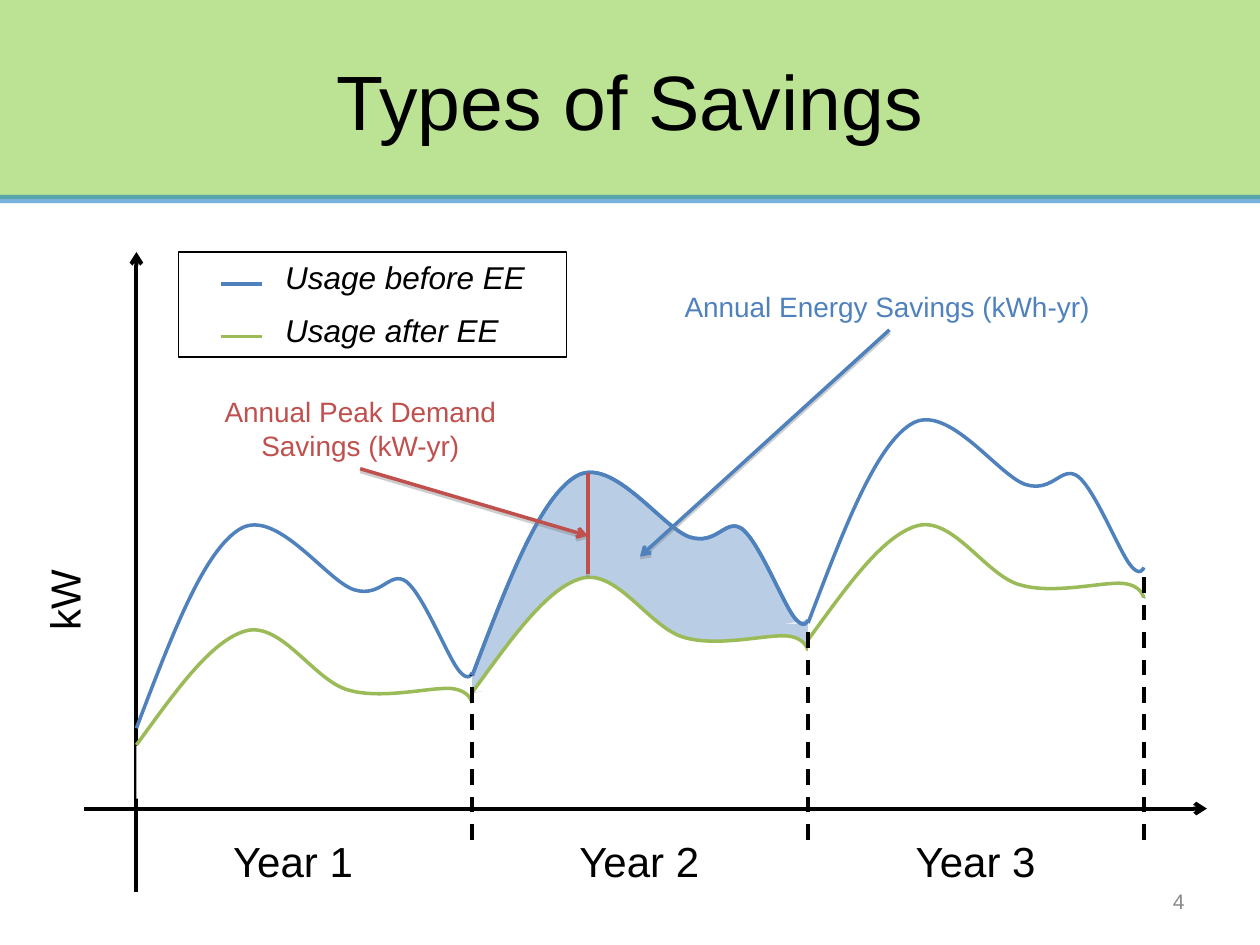
from dataclasses import dataclass

from lxml.etree import SubElement
from pptx import Presentation
from pptx.dml.color import RGBColor
from pptx.enum.dml import MSO_LINE
from pptx.enum.shapes import MSO_CONNECTOR, MSO_SHAPE
from pptx.enum.text import MSO_ANCHOR, PP_ALIGN
from pptx.oxml.ns import qn
from pptx.util import Cm, Pt


@dataclass(frozen=True)
class Theme:
    font: str = "Arial"
    ink: str = "000000"
    paper: str = "FFFFFF"
    band: str = "92D050"
    rule: str = "0070C0"
    before: str = "4F81BD"
    after: str = "9BBB59"
    peak: str = "C0504D"
    savings: str = "B9CDE5"
    muted: str = "898989"
    shadow: str = "808080"
    title_size: int = 44
    axis_size: int = 24
    legend_size: int = 18
    note_size: int = 16
    number_size: int = 12
    axis_width: float = 2.25
    curve_width: float = 2


THEME = Theme()

# Plot geometry in cm: each year repeats the same profile, a step higher
ORIGIN_X, YEAR_WIDTH, YEAR_RISE = 2.75, 6.77, 1.06
BEFORE_START, AFTER_START = 14.68, 15.02
DASH_BOTTOM, DASH_TOPS = 16.93, (13.61, 12.55, 11.46)

# Bezier control points of one year, relative to its starting point
BEFORE_PROFILE = [
    (0, 0), (0.68, -1.78), (1.34, -3.56), (2.08, -4.01),
    (2.81, -4.47), (3.83, -2.97), (4.39, -2.79),
    (4.95, -2.62), (5.11, -3.2), (5.45, -2.95),
    (5.79, -2.67), (6.25, -1.5), (6.48, -1.19),
    (6.7, -0.89), (6.77, -1.12), (6.77, -1.12),
]
AFTER_PROFILE = [
    (0, 0), (0.76, -1.04), (1.49, -2.1), (2.2, -2.3),
    (2.92, -2.5), (3.58, -1.3), (4.27, -1.11),
    (4.95, -0.91), (5.92, -1.17), (6.34, -1.14),
    (6.75, -1.1), (6.77, -0.83), (6.77, -0.83),
]

# Areas that complete the fill under each curve, relative to its start
BEFORE_AREAS = ((0, -0.11, 6.77, 0.46), (0.64, -1.05, 6.13, 1.17))
AFTER_AREAS = ((1.69, -0.84, 5.08, 1.91), (0, 0.02, 3.18, 1.06))
AFTER_WEDGE = (0, -0.62, 2.96, 0.64)


def rgb(color):
    return RGBColor.from_string(color)


def set_alpha(shape, percent):
    for color in shape._element.spPr.iter(qn("a:srgbClr")):
        SubElement(color, qn("a:alpha"), val=str(percent * 1000))


def add_text(slide, lines, box, size, color=THEME.ink, align=PP_ALIGN.LEFT,
             anchor=MSO_ANCHOR.TOP, italic=False, wrap=False):
    label = slide.shapes.add_textbox(*map(Cm, box))
    frame = label.text_frame
    frame.word_wrap = wrap
    frame.vertical_anchor = anchor
    for index, line in enumerate(lines):
        paragraph = frame.add_paragraph() if index else frame.paragraphs[0]
        paragraph.alignment = align
        run = paragraph.add_run()
        run.text = line
        run.font.name = THEME.font
        run.font.size = Pt(size)
        run.font.italic = italic
        run.font.color.rgb = rgb(color)
    return label


def add_line(slide, start, end, color, width, arrow=False, dashed=False,
             shadow=False):
    line = slide.shapes.add_connector(
        MSO_CONNECTOR.STRAIGHT, *map(Cm, (*start, *end)))
    line.line.color.rgb = rgb(color)
    line.line.width = Pt(width)
    if dashed:
        line.line.dash_style = MSO_LINE.DASH
    properties = line._element.spPr
    if arrow:
        SubElement(properties.find(qn("a:ln")), qn("a:tailEnd"), type="arrow")
    effects = SubElement(properties, qn("a:effectLst"))
    if shadow:
        outer = SubElement(effects, qn("a:outerShdw"), blurRad="0",
                           dist="20000", dir="5400000", rotWithShape="0")
        tint = SubElement(outer, qn("a:srgbClr"), val=THEME.shadow)
        SubElement(tint, qn("a:alpha"), val="38000")
    return line


def paint(shape, fill, border, width):
    shape.shadow.inherit = False
    if fill:
        shape.fill.solid()
        shape.fill.fore_color.rgb = rgb(fill)
    else:
        shape.fill.background()
    if border:
        shape.line.color.rgb = rgb(border)
        shape.line.width = Pt(width)
    else:
        shape.line.fill.background()


def add_box(slide, box, fill=None, border=None, kind=MSO_SHAPE.RECTANGLE):
    shape = slide.shapes.add_shape(kind, *map(Cm, box))
    paint(shape, fill, border, 0.75)
    return shape


def add_curve(slide, profile, start, border, fill=None):
    left, base = start
    points = [(Cm(left + x), Cm(base + y)) for x, y in profile]
    builder = slide.shapes.build_freeform(*points[0])
    builder.add_line_segments(points[3::3], close=False)
    curve = builder.convert_to_shape()
    # Turn the straight segments between the anchors into Bezier segments
    path = next(curve._element.iter(qn("a:path")))
    for index, segment in enumerate(path.findall(qn("a:lnTo"))):
        path.remove(segment)
        bezier = SubElement(path, qn("a:cubicBezTo"))
        for x, y in points[3 * index + 1:3 * index + 4]:
            SubElement(bezier, qn("a:pt"), x=str(x - curve.left),
                       y=str(y - curve.top))
    paint(curve, fill, border, THEME.curve_width)


def add_areas(slide, areas, start, fill, kind=MSO_SHAPE.RECTANGLE):
    return [add_box(slide, (start[0] + x, start[1] + y, width, height), fill,
                    kind=kind) for x, y, width, height in areas]


def add_header(slide):
    set_alpha(add_box(slide, (0, 0, 25.4, 4.01), THEME.band), 61)
    set_alpha(add_line(slide, (0, 4.01), (25.4, 4.01), THEME.rule, 4.75), 53)
    add_text(slide, ["Types of Savings"], (1.27, 0.43, 22.86, 3.18),
             THEME.title_size, align=PP_ALIGN.CENTER,
             anchor=MSO_ANCHOR.MIDDLE, wrap=True)
    add_text(slide, ["4"], (18.21, 17.65, 5.92, 1.02), THEME.number_size,
             THEME.muted, PP_ALIGN.RIGHT, MSO_ANCHOR.MIDDLE, wrap=True)


def add_axes(slide):
    for start, end in (((ORIGIN_X, 17.98), (ORIGIN_X, 5.08)),
                       ((1.7, 16.3), (24.33, 16.3))):
        add_line(slide, start, end, THEME.ink, THEME.axis_width, arrow=True)
    unit = add_text(slide, ["kW"], (0.43, 11.43, 1.75, 1.3), THEME.axis_size)
    unit.rotation = 270
    for year, left in enumerate((4.45, 11.43, 18.21), start=1):
        add_text(slide, [f"Year {year}"], (left, 16.71, 2.95, 1.3),
                 THEME.axis_size)


def year_start(year, base):
    return ORIGIN_X + year * YEAR_WIDTH, base - year * YEAR_RISE


def add_usage(slide):
    # The fill above the later curve shows only in the second year
    for year, fill in enumerate((None, THEME.savings, THEME.paper)):
        before = year_start(year, BEFORE_START)
        after = year_start(year, AFTER_START)
        if fill:
            add_areas(slide, BEFORE_AREAS, before, fill)
        add_curve(slide, BEFORE_PROFILE, before, THEME.before, fill)
        add_curve(slide, AFTER_PROFILE, after, THEME.after, THEME.paper)
        add_areas(slide, AFTER_AREAS, after, THEME.paper)
        wedge, = add_areas(slide, [AFTER_WEDGE], after, THEME.paper,
                           MSO_SHAPE.RIGHT_TRIANGLE)
        wedge.rotation = 180
        wedge._element.spPr.find(qn("a:xfrm")).set("flipV", "1")
    # Year ends
    for year, top in enumerate(DASH_TOPS, start=1):
        x = ORIGIN_X + year * YEAR_WIDTH
        add_line(slide, (x, DASH_BOTTOM), (x, top), THEME.ink,
                 THEME.axis_width, dashed=True)
    # Second-year usage stays in front of the fills
    add_curve(slide, BEFORE_PROFILE, year_start(1, BEFORE_START), THEME.before)


def add_legend(slide):
    add_box(slide, (3.6, 5.08, 7.82, 2.12), border=THEME.ink)
    entries = (("Usage before EE", THEME.before, 5.54),
               ("Usage after EE", THEME.after, 5))
    for row, (name, color, width) in enumerate(entries):
        top = 5.08 + row * 1.06
        add_line(slide, (4.45, top + 0.64), (5.29, top + 0.64), color,
                 THEME.curve_width)
        add_text(slide, [name], (5.5, top, width, 1.02), THEME.legend_size,
                 italic=True)


def add_savings_notes(slide):
    add_text(slide, ["Annual Peak Demand", "Savings (kW-yr)"],
             (4.23, 7.83, 6.07, 1.62), THEME.note_size, THEME.peak,
             PP_ALIGN.CENTER)
    add_text(slide, ["Annual Energy Savings (kWh-yr)"],
             (13.55, 5.72, 8.79, 0.94), THEME.note_size, THEME.before)
    # Peak gap, then the pointers to the peak and to the shaded area
    for start, end, color, arrow in (
            ((11.85, 9.53), (11.85, 11.58), THEME.peak, False),
            ((7.26, 9.45), (11.85, 10.8), THEME.peak, True),
            ((17.93, 6.65), (12.9, 11.22), THEME.before, True)):
        add_line(slide, start, end, color, THEME.curve_width, arrow=arrow,
                 shadow=True)


def main():
    presentation = Presentation()
    presentation.slide_width, presentation.slide_height = Cm(25.4), Cm(19.05)
    slide = presentation.slides.add_slide(presentation.slide_layouts[6])
    for add_part in (add_header, add_axes, add_usage, add_legend,
                     add_savings_notes):
        add_part(slide)
    presentation.save("out.pptx")


if __name__ == "__main__":
    main()
